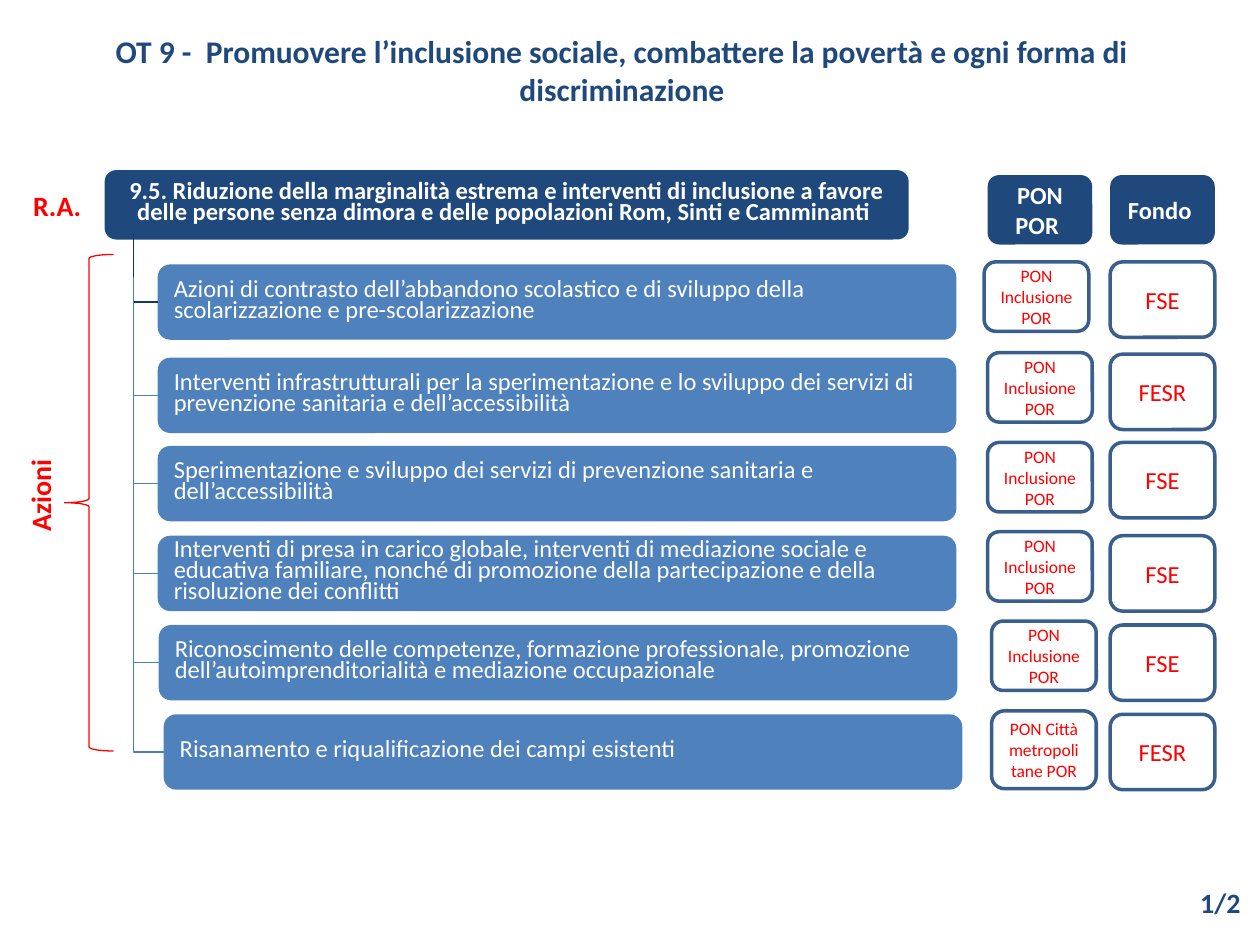
from dataclasses import dataclass

from lxml.etree import SubElement
from pptx import Presentation
from pptx.dml.color import RGBColor
from pptx.enum.shapes import MSO_CONNECTOR, MSO_SHAPE
from pptx.enum.text import MSO_ANCHOR, MSO_AUTO_SIZE, PP_ALIGN
from pptx.oxml.ns import qn
from pptx.util import Cm, Pt

COLOURS = {
    "navy": "1F497D",
    "blue": "4F81BD",
    "outline": "3A5F8C",
    "branch": "4B7EBC",
    "first_branch": "17375E",
    "red": "FF0000",
    "white": "FFFFFF",
}
FONT = "Calibri"
ACTION_WIDTH, ROW_HEIGHT = 16.1, 1.52
TAG_WIDTH, FUND_LEFT = 2.11, 22.38
HEADER_HEIGHT = 1.4
TRUNK_X = 2.69


@dataclass(frozen=True)
class Area:
    """A rectangle in centimetres."""
    left: float
    top: float
    width: float
    height: float

    def lengths(self) -> tuple:
        """Return the four sides as lengths."""
        return Cm(self.left), Cm(self.top), Cm(self.width), Cm(self.height)


@dataclass(frozen=True)
class TextStyle:
    """The look of a text."""
    size: float
    colour: str
    bold: bool = False
    align: PP_ALIGN = PP_ALIGN.CENTER
    spacing: float | None = None


@dataclass(frozen=True)
class Action:
    """One action with its programme, its fund and its branch."""
    text: str
    left: float
    top: float
    branch_top: float
    fund: str
    fund_top: float
    programme_left: float
    programme_top: float
    programme: str = "PON Inclusione POR"
    programme_height: float = HEADER_HEIGHT
    branch_colour: str = "branch"


HEADING = TextStyle(14, "white", True)
RESULT = TextStyle(14, "white", True, spacing=12)
ACTION = TextStyle(14, "white", align=PP_ALIGN.LEFT, spacing=12)
FUND = TextStyle(14, "red")
PROGRAMME = TextStyle(10, "red")
LABEL = TextStyle(16, "red", True)

ACTIONS = [
    Action("Azioni di contrasto dell’abbandono scolastico e di sviluppo della "
           "scolarizzazione e pre-scolarizzazione",
           3.18, 5.33, 4.72, "FSE", 5.28, 19.84, 5.28, branch_colour="first_branch"),
    Action("Interventi infrastrutturali per la sperimentazione e lo sviluppo dei servizi di "
           "prevenzione sanitaria e dell’accessibilità",
           3.18, 7.21, 5.59, "FESR", 7.14, 19.91, 7.11),
    Action("Sperimentazione e sviluppo dei servizi di prevenzione sanitaria e "
           "dell’accessibilità",
           3.18, 8.99, 8.74, "FSE", 8.92, 19.91, 8.92),
    Action("Interventi di presa in carico globale, interventi di mediazione sociale e "
           "educativa familiare, nonché di promozione della partecipazione e della "
           "risoluzione dei conflitti",
           3.18, 10.8, 6.6, "FSE", 10.8, 19.91, 10.72),
    Action("Riconoscimento delle competenze, formazione professionale, promozione "
           "dell’autoimprenditorialità e mediazione occupazionale",
           3.2, 12.6, 8.92, "FSE", 12.6, 19.99, 12.52),
    Action("Risanamento e riqualificazione dei campi esistenti",
           3.3, 14.4, 10.77, "FESR", 14.4, 19.99, 14.33,
           "PON Città metropolitane POR", 1.57),
]


def colour(name: str) -> RGBColor:
    """Look up a colour by name."""
    return RGBColor.from_string(COLOURS[name])


def write(shape, text: str, style: TextStyle) -> None:
    """Put a styled text into a shape."""
    frame = shape.text_frame
    frame.word_wrap = True
    para = frame.paragraphs[0]
    para.alignment = style.align
    if style.spacing:
        para.line_spacing = Pt(style.spacing)
    span = para.add_run()
    span.text = text
    span.font.name = FONT
    span.font.size = Pt(style.size)
    span.font.bold = style.bold
    span.font.color.rgb = colour(style.colour)


def add_label(page, area: Area, text: str, style: TextStyle, rotation: float = 0):
    """Add a text box."""
    box = page.shapes.add_textbox(*area.lengths())
    box.rotation = rotation
    write(box, text, style)
    box.text_frame.auto_size = MSO_AUTO_SIZE.SHAPE_TO_FIT_TEXT
    return box


def add_box(page, area: Area, text: str, style: TextStyle, fill: str,
            outline: str | None = None) -> None:
    """Add a rounded box with a text."""
    box = page.shapes.add_shape(MSO_SHAPE.ROUNDED_RECTANGLE, *area.lengths())
    box.shadow.inherit = False
    box.fill.solid()
    box.fill.fore_color.rgb = colour(fill)
    if outline:
        box.line.color.rgb = colour(outline)
        box.line.width = Pt(2)
    else:
        box.line.fill.background()
    box.text_frame.vertical_anchor = MSO_ANCHOR.MIDDLE
    write(box, text, style)


def add_brace(page, area: Area) -> None:
    """Add the brace that gathers the actions."""
    brace = page.shapes.add_shape(MSO_SHAPE.LEFT_BRACE, *area.lengths())
    brace.shadow.inherit = False
    brace.fill.background()
    brace.line.color.rgb = colour("red")
    brace.line.width = Pt(0.75)


def add_branch(page, action: Action) -> None:
    """Add an elbow that runs down the trunk and right to an action."""
    drop = action.top + ROW_HEIGHT / 2 - action.branch_top
    reach = action.left - TRUNK_X
    middle_x = TRUNK_X + reach / 2
    middle_y = action.branch_top + drop / 2
    branch = page.shapes.add_connector(
        MSO_CONNECTOR.ELBOW,
        Cm(middle_x + drop / 2), Cm(middle_y - reach / 2),
        Cm(middle_x - drop / 2), Cm(middle_y + reach / 2))
    branch.line.color.rgb = colour(action.branch_colour)
    branch.line.width = Pt(0.75)
    properties = branch._element.spPr
    properties.find(qn("a:xfrm")).set("rot", str(270 * 60000))
    properties.find(qn("a:prstGeom")).set("prst", "bentConnector2")
    SubElement(properties, qn("a:effectLst"))


def add_action(page, action: Action) -> None:
    """Add one row of the scheme."""
    add_box(page, Area(action.left, action.top, ACTION_WIDTH, ROW_HEIGHT),
            action.text, ACTION, "blue")
    add_branch(page, action)
    add_box(page, Area(FUND_LEFT, action.fund_top, TAG_WIDTH, ROW_HEIGHT),
            action.fund, FUND, "white", "outline")
    add_box(page, Area(action.programme_left, action.programme_top, TAG_WIDTH,
                       action.programme_height),
            action.programme, PROGRAMME, "white", "outline")


def main() -> None:
    """Build the slide."""
    deck = Presentation()
    deck.slide_width, deck.slide_height = Cm(25.4), Cm(19.05)
    page = deck.slides.add_slide(deck.slide_layouts[6])
    add_label(page, Area(1.73, 0.53, 21.62, 1.8),
              "OT 9 -  Promuovere l’inclusione sociale, combattere la povertà e ogni forma di "
              "discriminazione", TextStyle(18, "navy", True))
    add_box(page, Area(2.11, 3.43, 16.21, HEADER_HEIGHT),
            "9.5. Riduzione della marginalità estrema e interventi di inclusione a favore delle "
            "persone senza dimora e delle popolazioni Rom, Sinti e Camminanti ", RESULT, "navy")
    for left, text in ((19.91, "PON POR "), (FUND_LEFT, "Fondo ")):
        add_box(page, Area(left, 3.53, TAG_WIDTH, HEADER_HEIGHT), text, HEADING, "navy")
    result_label = add_label(page, Area(0.33, 3.33, 1.65, 1.63), "R.A.", LABEL)
    result_label.text_frame.auto_size = MSO_AUTO_SIZE.NONE
    result_label.text_frame.vertical_anchor = MSO_ANCHOR.MIDDLE
    add_brace(page, Area(1.3, 5.13, 0.99, 10.01))
    add_label(page, Area(-2.18, 9.45, 5.99, 0.94), "Azioni ", LABEL, 270)
    for action in ACTIONS:
        add_action(page, action)
    add_label(page, Area(23.9, 17.73, 1.4, 0.94), "1/2", TextStyle(16, "navy", True))
    deck.save("out.pptx")


if __name__ == "__main__":
    main()
